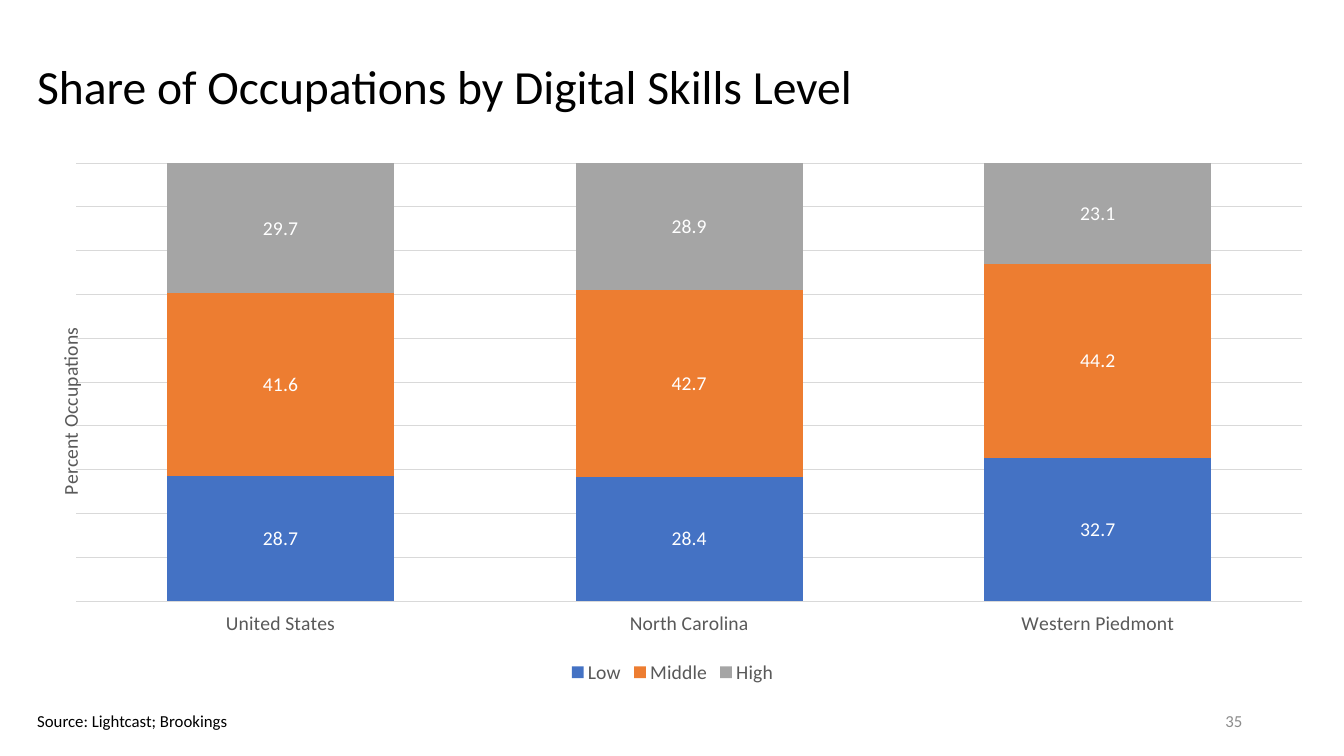
from lxml.etree import SubElement
from pptx import Presentation
from pptx.chart.data import CategoryChartData
from pptx.dml.color import RGBColor
from pptx.enum.chart import XL_CHART_TYPE as ChartType, XL_LEGEND_POSITION as LegendPosition
from pptx.enum.chart import XL_TICK_LABEL_POSITION as TickLabels, XL_TICK_MARK as TickMark
from pptx.enum.text import MSO_ANCHOR as Anchor, PP_ALIGN as Align
from pptx.oxml.ns import qn
from pptx.util import Inches, Pt

COLORS = {"ink": "000000", "axis": "595959", "grid": "D9D9D9", "number": "8C8C8C",
          "label": "FFFFFF", "Low": "4472C4", "Middle": "ED7D31", "High": "A5A5A5"}
SHARES = {"Low": (28.7, 28.4, 32.7), "Middle": (41.6, 42.7, 44.2), "High": (29.7, 28.9, 23.1)}
MARGIN = 0.27


def style_font(font, size, color):
    font.name = "Calibri"
    font.size = Pt(size)
    font.bold = False
    font.color.rgb = RGBColor.from_string(COLORS[color])


def place(parent, index, **settings):
    for previous in parent.findall(qn("c:layout")):
        parent.remove(previous)
    layout = SubElement(parent, qn("c:layout"))
    manual = SubElement(layout, qn("c:manualLayout"))
    for tag, value in settings.items():
        SubElement(manual, qn(f"c:{tag}")).set("val", str(value))
    parent.insert(index, layout)


deck = Presentation()
deck.slide_width, deck.slide_height = Inches(13.33), Inches(7.5)
slide = deck.slides.add_slide(deck.slide_layouts[6])

for words, box, size, color, align, anchor, wrap in (
    ("Share of Occupations by Digital Skills Level", (MARGIN, 0.34, 12.76, 1.09),
     34, "ink", Align.LEFT, Anchor.MIDDLE, True),
    ("35", (9.42, 6.95, 3, 0.4), 12, "number", Align.RIGHT, Anchor.MIDDLE, True),
    ("Source: Lightcast; Brookings", (MARGIN, 7, 2.11, 0.3),
     12, "ink", Align.LEFT, Anchor.TOP, False),
):
    frame = slide.shapes.add_textbox(*map(Inches, box)).text_frame
    frame.word_wrap = wrap
    frame.vertical_anchor = anchor
    frame.text = words
    line = frame.paragraphs[0]
    line.alignment = align
    line.line_spacing = 0.9 if size == 34 else 1.0
    style_font(line.runs[0].font, size, color)

occupations = CategoryChartData(number_format="0.0")
occupations.categories = ["United States", "North Carolina", "Western Piedmont"]
for level, values in SHARES.items():
    occupations.add_series(level, values)
chart = slide.shapes.add_chart(ChartType.COLUMN_STACKED_100, Inches(MARGIN), Inches(1.43),
                               Inches(12.8), Inches(5.4), occupations).chart
chart.has_title = False
style_font(chart.font, 14, "ink")

columns = chart.plots[0]
columns.gap_width = 80
columns.overlap = 100
columns.vary_by_categories = False
for level in columns.series:
    level.format.fill.solid()
    level.format.fill.fore_color.rgb = RGBColor.from_string(COLORS[level.name])
    labels = level.data_labels
    labels.show_value = True
    labels.number_format = "0.0"
    labels.number_format_is_linked = False
    style_font(labels.font, 14, "label")

regions = chart.category_axis
regions.major_tick_mark = regions.minor_tick_mark = TickMark.NONE
regions.tick_label_position = TickLabels.LOW
style_font(regions.tick_labels.font, 14, "axis")

percent = chart.value_axis
percent.visible = False
percent.major_unit = 0.1
percent.has_major_gridlines = True
for rule in (regions.format.line, percent.major_gridlines.format.line):
    rule.color.rgb = RGBColor.from_string(COLORS["grid"])
    rule.width = Pt(0.75)

heading = percent.axis_title.text_frame
heading.text = "Percent Occupations"
style_font(heading.paragraphs[0].runs[0].font, 14, "axis")
title = percent._element.find(qn("c:title"))
turn = title.find(".//" + qn("a:bodyPr"))
turn.set("rot", "-5400000")
turn.set("vert", "horz")
place(title, 1, xMode="edge", yMode="edge", x=0.02, y=0.33)

chart.has_legend = True
chart.legend.position = LegendPosition.BOTTOM
chart.legend.include_in_layout = False
style_font(chart.legend.font, 14, "axis")

plot_area = chart._chartSpace.find(".//" + qn("c:plotArea"))
place(plot_area, 0, layoutTarget="inner", xMode="edge", yMode="edge",
      x=0.038, y=0.035, w=0.95, h=0.805)

deck.save("out.pptx")
